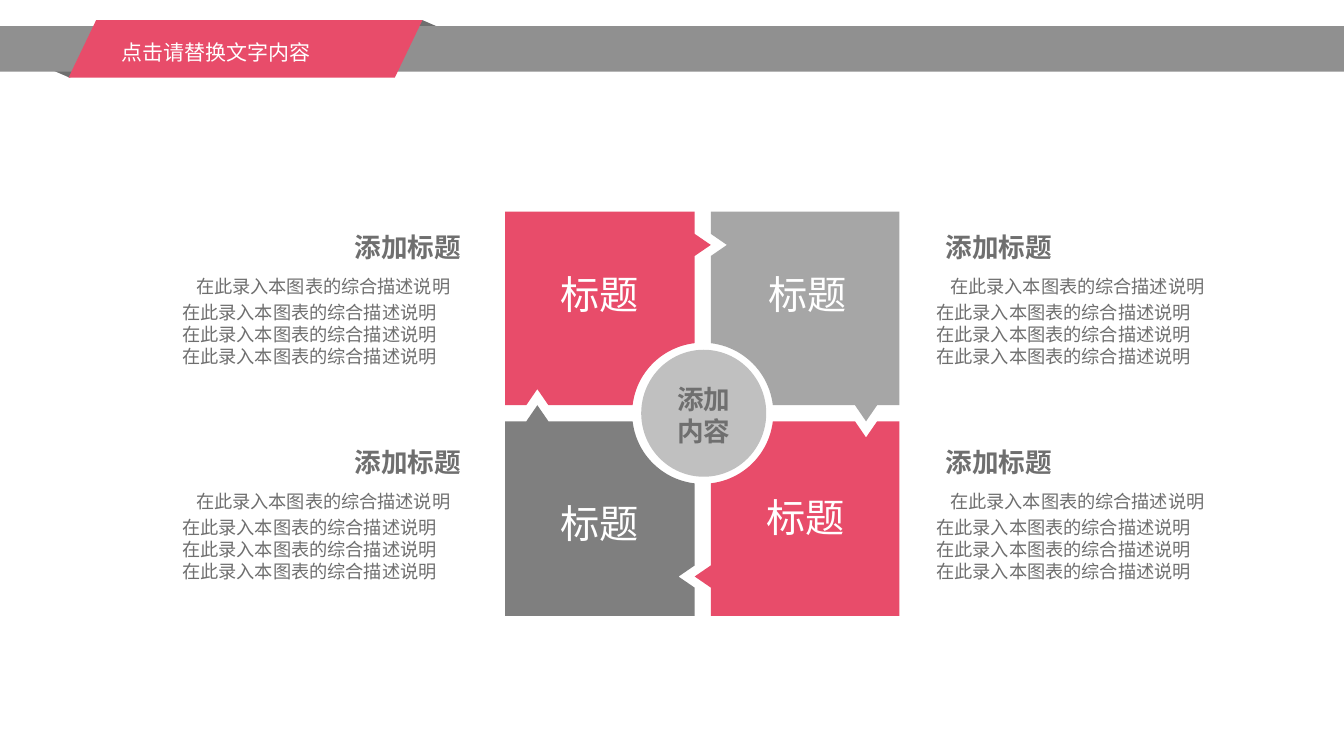
from math import asin, cos, pi, sin

from lxml import etree
from pptx import Presentation
from pptx.dml.color import RGBColor
from pptx.enum.shapes import MSO_SHAPE
from pptx.enum.text import MSO_ANCHOR, MSO_AUTO_SIZE, PP_ALIGN
from pptx.oxml.ns import qn
from pptx.util import Inches, Pt

LEFT, CENTER, RIGHT = PP_ALIGN.LEFT, PP_ALIGN.CENTER, PP_ALIGN.RIGHT
TOP, NO_FIT = MSO_ANCHOR.TOP, MSO_AUTO_SIZE.NONE
ELLIPSE, RECT = MSO_SHAPE.OVAL, MSO_SHAPE.RECTANGLE
TRIANGLE, BANNER = MSO_SHAPE.ISOSCELES_TRIANGLE, MSO_SHAPE.PARALLELOGRAM

CJK = "Noto Sans CJK SC"
PINK, WHITE, INK = "E84C6A", "FFFFFF", "6F6F6F"
DESCRIPTION = "在此录入本图表的综合描述说明"

HUB_X, HUB_Y, HUB_RADIUS = 6.97, 4.1, 0.7
HALF_GAP, TIP, TIP_HALF = 0.08, 0.16, 0.11
EDGE_X, EDGE_Y = {-1: 5.01, 1: 8.92}, {-1: 2.1, 1: 6.11}
TIP_X, TIP_Y = {-1: 5.33, 1: 8.59}, {-1: 2.43, 1: 5.72}


def rgb(value):
    """Turn a hex string into a colour."""
    return RGBColor.from_string(value)


def paint(sp, color):
    """Give a shape a flat fill without outline or shadow."""
    sp.shadow.inherit = False
    sp.fill.solid()
    sp.fill.fore_color.rgb = rgb(color)
    sp.line.fill.background()


def add_flat(s, kind, box, color):
    """Add a flat preset shape."""
    sp = s.shapes.add_shape(kind, *map(Inches, box))
    paint(sp, color)
    return sp


def style(p, size, color, align=LEFT, font=CJK, bold=False, spacing=1.0):
    """Format a paragraph and its fonts."""
    p.alignment, p.line_spacing = align, spacing
    p.font.size, p.font.bold, p.font.name = Pt(size), bold, font
    p.font.color.rgb = rgb(color)
    rpr = p._p.pPr.find(qn("a:defRPr"))
    etree.SubElement(rpr, qn("a:ea")).set("typeface", CJK)


def add_text(s, box, lines, wrap=True):
    """Add a text box and return its paragraphs."""
    tf = s.shapes.add_textbox(*map(Inches, box)).text_frame
    tf.word_wrap = wrap
    tf.text = "\n".join(lines)
    return tf.paragraphs


def add_piece(s, sx, sy, color):
    """Draw one puzzle quadrant; sx and sy tell its side of the hub."""
    inner_x, inner_y = HUB_X + sx * HALF_GAP, HUB_Y + sy * HALF_GAP
    start = asin(HALF_GAP / HUB_RADIUS)
    sweep = pi / 2 - 2 * start
    angles = [start + sweep * i / 24 for i in range(25)]
    points = [(HUB_X + sx * HUB_RADIUS * cos(a), HUB_Y + sy * HUB_RADIUS * sin(a))
              for a in angles]
    points += [
        (inner_x, TIP_Y[sy] - sy * TIP_HALF),
        (inner_x - sy * TIP, TIP_Y[sy]),
        (inner_x, TIP_Y[sy] + sy * TIP_HALF),
        (inner_x, EDGE_Y[sy]),
        (EDGE_X[sx], EDGE_Y[sy]),
        (EDGE_X[sx], inner_y),
        (TIP_X[sx] + sx * TIP_HALF, inner_y),
        (TIP_X[sx], inner_y + sx * TIP),
        (TIP_X[sx] - sx * TIP_HALF, inner_y),
    ]
    points = [(Inches(x), Inches(y)) for x, y in points]
    builder = s.shapes.build_freeform(*points[0])
    builder.add_line_segments(points[1:], close=True)
    paint(builder.convert_to_shape(), color)


def add_label(s, left, top):
    """Write the heading of one puzzle piece."""
    style(add_text(s, (left, top, 1.88, 0.57), ["标题"])[0], 28, WHITE, CENTER)


def add_hub(s):
    """Draw the central circle with its two lines."""
    add_flat(s, ELLIPSE, (6.36, 3.47, 1.24, 1.26), "C0C0C0")
    for p in add_text(s, (6.26, 3.75, 1.44, 0.77), ["添加", "内容"]):
        style(p, 19, INK, CENTER, bold=True)


def add_note(s, heading_left, body_left, top):
    """Write a heading with its four description lines."""
    heading = add_text(s, (heading_left, top, 1.27, 0.42), ["添加标题"], wrap=False)
    style(heading[0], 19, INK, RIGHT, bold=True)
    body = add_text(s, (body_left, top + 0.4, 3.15, 1.09), [DESCRIPTION] * 4)
    style(body[0], 13, INK, CENTER, spacing=1.2)
    for p, font, spacing in zip(body[1:], (CJK, "Calibri", "Calibri"), (1.2, 1.0, 1.0)):
        style(p, 13, INK, font=font, spacing=spacing)
        p._p.pPr.set("marL", str(Inches(0.08)))


def add_header(s):
    """Draw the ribbon and place the title on it."""
    add_flat(s, TRIANGLE, (3.59, 0.2, 1.2, 0.26), INK)
    add_flat(s, TRIANGLE, (0.09, 0.51, 1.2, 0.26), INK).rotation = 180
    add_flat(s, RECT, (0, 0.26, 13.33, 0.45), "909090")
    add_flat(s, BANNER, (0.68, 0.2, 3.51, 0.57), PINK).adjustments[0] = 0.48
    title = s.shapes.title
    title.left, title.top = Inches(1.11), Inches(0.22)
    title.width, title.height = Inches(2.63), Inches(0.48)
    tf = title.text_frame
    tf.text = "点击请替换文字内容"
    tf.vertical_anchor, tf.auto_size, tf.word_wrap = TOP, NO_FIT, True
    style(tf.paragraphs[0], 15, WHITE, font="Arial", spacing=1.5)
    s.shapes._spTree.append(title._element)


def main():
    """Build the slide and save it."""
    prs = Presentation()
    prs.slide_width, prs.slide_height = Inches(13.33), Inches(7.5)
    s = prs.slides.add_slide(prs.slide_layouts[5])
    for sx, sy, color, left, top in (
        (-1, 1, "7F7F7F", 5.01, 4.9),
        (1, 1, PINK, 7.05, 4.84),
        (1, -1, "A6A6A6", 7.07, 2.63),
        (-1, -1, PINK, 5.01, 2.63),
    ):
        add_piece(s, sx, sy, color)
        add_label(s, left, top)
    add_hub(s)
    for top in (2.24, 4.37):
        for heading_left, body_left in ((3.4, 1.63), (9.26, 9.11)):
            add_note(s, heading_left, body_left, top)
    add_header(s)
    prs.save("out.pptx")


if __name__ == "__main__":
    main()
